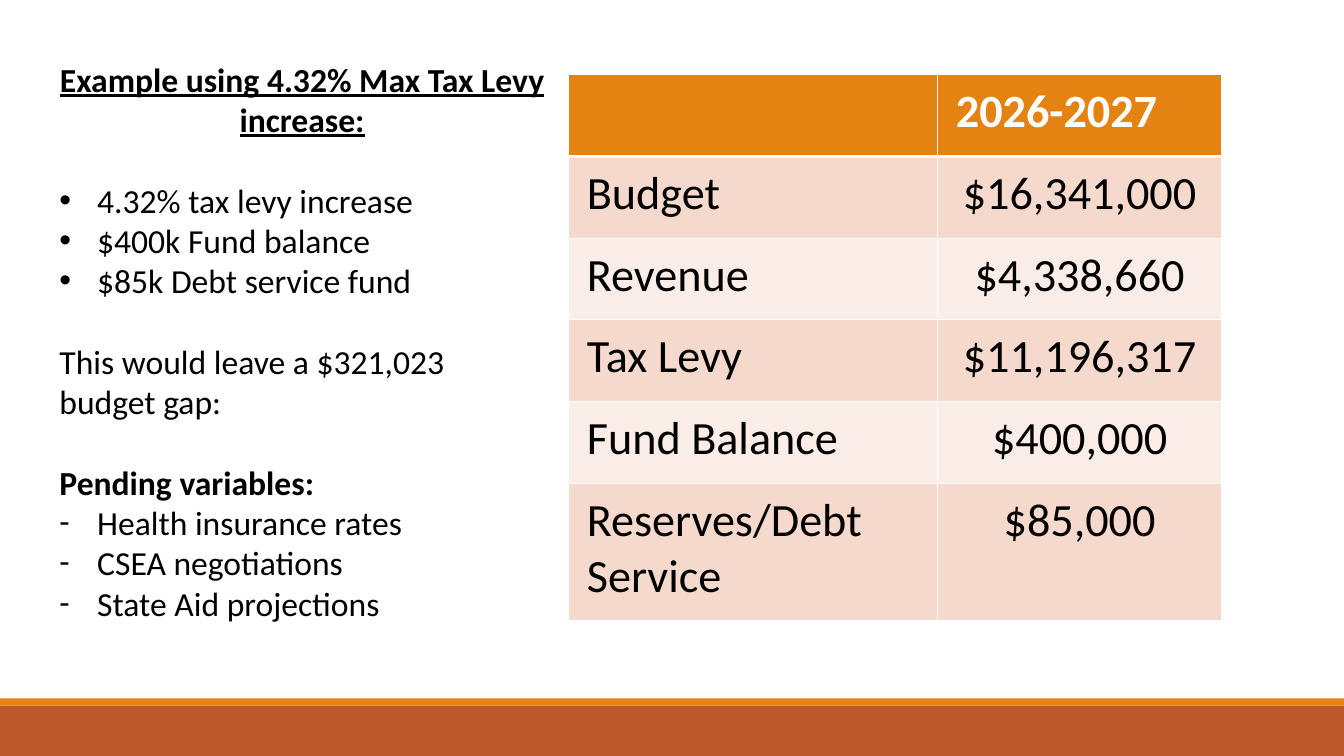
"""Build the budget slide for a 4.32% maximum tax levy increase."""
from dataclasses import dataclass

from lxml.etree import SubElement
from pptx import Presentation
from pptx.dml.color import RGBColor
from pptx.enum.shapes import MSO_SHAPE as Preset
from pptx.enum.text import PP_ALIGN as Align
from pptx.oxml.ns import qn
from pptx.util import Cm, Pt

ORANGE, RUST, WHITE, BLACK = "E48312", "BD582C", "FFFFFF", "000000"
BANDS = ("F5D9CC", "FAEDE7")
LINE_PITCH = 28.8


@dataclass
class Band:
    top: float
    height: float
    color: str


@dataclass
class Note:
    text: str
    bullet: str = ""
    gap: bool = False
    bold: bool = False
    underline: bool = False
    align: Align = Align.LEFT


@dataclass
class BudgetRow:
    label: str
    amount: str
    height: float = 2.06


FOOTER = [Band(17.78, 1.27, RUST), Band(17.6, 0.18, ORANGE)]
NOTES = [
    Note("Example using 4.32% Max Tax Levy increase:", bold=True, underline=True, align=Align.CENTER),
    Note("4.32% tax levy increase", "•", gap=True),
    Note("$400k Fund balance", "•"),
    Note("$85k Debt service fund", "•"),
    Note("This would leave a $321,023 budget gap:", gap=True),
    Note("Pending variables:", gap=True, bold=True),
    Note("Health insurance rates", "-"),
    Note("CSEA negotiations", "-"),
    Note("State Aid projections", "-"),
]
BUDGET = [
    BudgetRow("", "2026-2027"),
    BudgetRow("Budget", "$16,341,000"),
    BudgetRow("Revenue", "$4,338,660"),
    BudgetRow("Tax Levy", "$11,196,317"),
    BudgetRow("Fund Balance", "$400,000"),
    BudgetRow("Reserves/Debt Service", "$85,000", 3.45),
]


def paint(fill, color: str) -> None:
    fill.solid()
    fill.fore_color.rgb = RGBColor.from_string(color)


def write(paragraph, text: str, *, size: float, color: str = BLACK, bold: bool = False,
          underline: bool = False, align: Align = Align.LEFT, bullet: str = "") -> None:
    if bullet:
        properties = paragraph._p.get_or_add_pPr()
        properties.set("marL", str(Cm(0.95)))
        properties.set("indent", str(-Cm(0.95)))
        SubElement(properties, qn("a:buFont"), typeface="Arial" if bullet == "•" else "Calibri")
        SubElement(properties, qn("a:buChar"), char=bullet)
    paragraph.alignment = align
    run = paragraph.add_run()
    run.text = text
    font = run.font
    font.name, font.size, font.bold, font.underline = "Calibri", Pt(size), bold, underline
    font.color.rgb = RGBColor.from_string(color)


def draw_band(slide, band: Band, width: int) -> None:
    bar = slide.shapes.add_shape(Preset.RECTANGLE, 0, Cm(band.top), width, Cm(band.height))
    bar.shadow.inherit = False
    paint(bar.fill, band.color)
    bar.line.fill.background()


def draw_notes(slide, notes: list[Note]) -> None:
    frame = slide.shapes.add_textbox(Cm(1.25), Cm(1.35), Cm(12.73), Cm(14.8)).text_frame
    frame.word_wrap = True
    for index, note in enumerate(notes):
        paragraph = frame.add_paragraph() if index else frame.paragraphs[0]
        paragraph.line_spacing = Pt(LINE_PITCH)
        if note.gap:
            paragraph.space_before = Pt(LINE_PITCH)
        write(paragraph, note.text, size=24, bold=note.bold, underline=note.underline,
              align=note.align, bullet=note.bullet)


def set_borders(cell, widths: dict[str, float]) -> None:
    properties = cell._tc.get_or_add_tcPr()
    for side, width in widths.items():
        line = SubElement(properties, qn(f"a:ln{side}"), w=str(Pt(width)))
        SubElement(SubElement(line, qn("a:solidFill")), qn("a:srgbClr"), val=WHITE)


def draw_budget(slide, rows: list[BudgetRow]) -> None:
    widths = (9.3, 7.16)
    table = slide.shapes.add_table(len(rows), len(widths), Cm(14.33), Cm(1.88), Cm(sum(widths)),
                                   Cm(sum(row.height for row in rows))).table
    for column, width in zip(table.columns, widths):
        column.width = Cm(width)
    for index, row in enumerate(rows):
        table.rows[index].height = Cm(row.height)
        header = index == 0
        for position, text in enumerate((row.label, row.amount)):
            cell = table.cell(index, position)
            cell.margin_left = cell.margin_right = Cm(0.46)
            cell.margin_top = cell.margin_bottom = Cm(0.23)
            set_borders(cell, {"L": 1, "R": 1, "T": 3 if index == 1 else 1, "B": 3 if header else 1})
            paint(cell.fill, ORANGE if header else BANDS[(index - 1) % 2])
            if text:
                write(cell.text_frame.paragraphs[0], text, size=33, bold=header,
                      color=WHITE if header else BLACK,
                      align=Align.CENTER if position and not header else Align.LEFT)


def main() -> None:
    deck = Presentation()
    deck.slide_width, deck.slide_height = Cm(33.87), Cm(19.05)
    slide = deck.slides.add_slide(deck.slide_layouts[6])
    for band in FOOTER:
        draw_band(slide, band, deck.slide_width)
    draw_budget(slide, BUDGET)
    draw_notes(slide, NOTES)
    deck.save("out.pptx")


if __name__ == "__main__":
    main()
